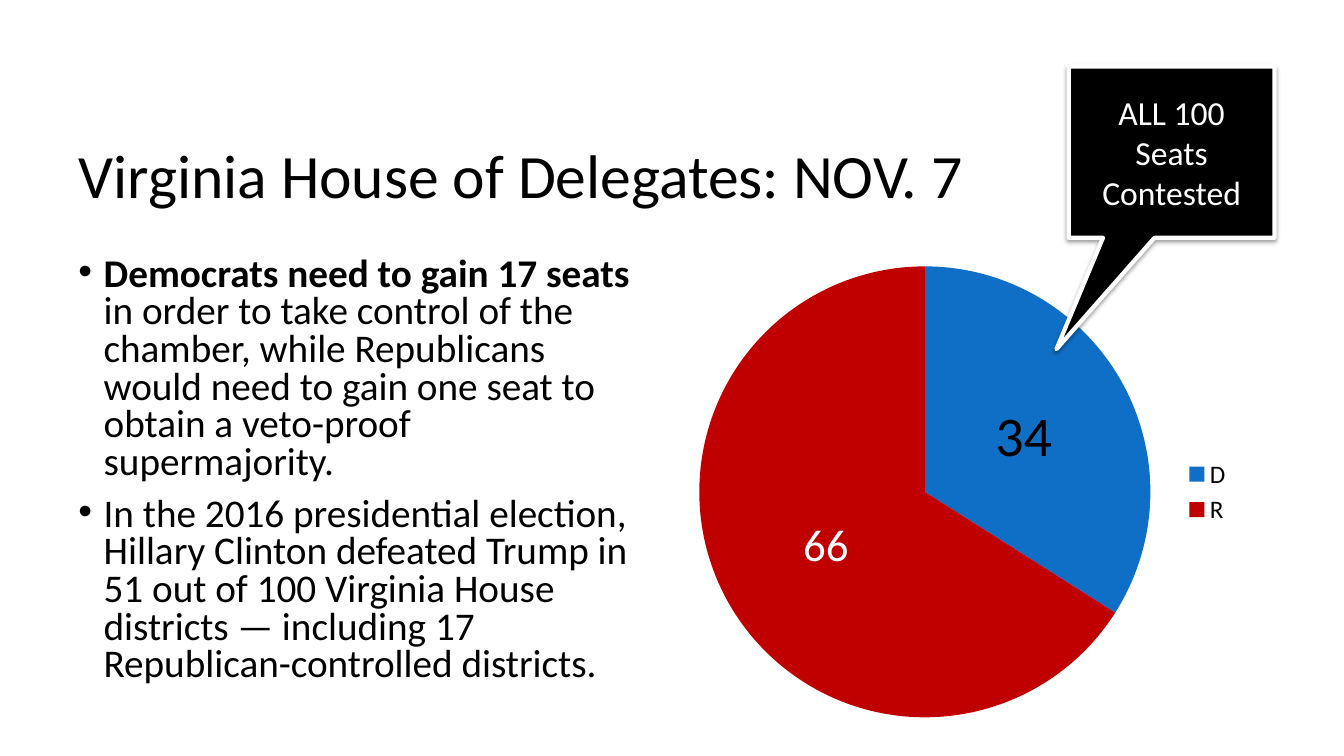
"""Builds the Virginia House of Delegates slide with its seat chart."""
import pptx
import pptx.chart.data
import pptx.dml.color
import pptx.enum.chart
import pptx.enum.shapes
import pptx.enum.text
import pptx.oxml
import pptx.oxml.ns
import pptx.util
from pptx.util import Inches, Pt

FONT = "Calibri"
BLACK, WHITE = "000000", "FFFFFF"
HEADLINE = "Virginia House of Delegates: NOV. 7"
CALLOUT = "ALL 100 Seats Contested"
POINTS = [
    [("Democrats need to gain 17 seats", True),
     (" in order to take control of the chamber, while Republicans would need "
      "to gain one seat to obtain a veto-proof supermajority.", False)],
    [("In the 2016 presidential election, Hillary Clinton defeated Trump in 51 "
      "out of 100 Virginia House districts — including 17 "
      "Republican-controlled districts.", False)],
]
SEATS = [("D", 34, "0F6FC6", BLACK, 40), ("R", 66, "C00000", WHITE, 32)]

HEADLINE_BOX = (0.68, 1.05, 10.41, 1.45)
POINTS_BOX = (0.68, 2.5, 5.7, 4.76)
CHART_BOX = (6.65, 2.5, 5.67, 4.76)
CALLOUT_BOX = (10.6, 0.66, 2.04, 1.7)
PIE_LAYOUT = {"x": 0.05, "y": 0.03, "w": 0.79, "h": 0.94}
NS = pptx.oxml.ns.nsdecls("a", "c")


def color(value):
    return pptx.dml.color.RGBColor.from_string(value)


def style(font, size, hue, bold=False):
    font.name, font.size, font.bold = FONT, Pt(size), bold
    font.color.rgb = color(hue)


def place(box):
    return [Inches(length) for length in box]


def add_text(slide, box, anchor):
    frame = slide.shapes.add_textbox(*place(box)).text_frame
    frame.word_wrap = True
    frame.vertical_anchor = anchor
    return frame


def add_headline(slide):
    frame = add_text(slide, HEADLINE_BOX, pptx.enum.text.MSO_ANCHOR.MIDDLE)
    frame.text = HEADLINE
    frame.paragraphs[0].line_spacing = 0.9
    style(frame.paragraphs[0].runs[0].font, 44, BLACK)


def add_points(slide):
    frame = add_text(slide, POINTS_BOX, pptx.enum.text.MSO_ANCHOR.TOP)
    for index, pieces in enumerate(POINTS):
        paragraph = frame.add_paragraph() if index else frame.paragraphs[0]
        paragraph.line_spacing = 0.8
        paragraph.space_before = Pt(10 if index else 0)
        properties = paragraph._p.get_or_add_pPr()
        properties.set("marL", str(Inches(0.25)))
        properties.set("indent", str(-Inches(0.25)))
        for xml in (f'<a:buFont {NS} typeface="Arial"/>', f'<a:buChar {NS} char="•"/>'):
            properties.append(pptx.oxml.parse_xml(xml))
        for words, bold in pieces:
            run = paragraph.add_run()
            run.text = words
            style(run.font, 28, BLACK, bold)


def add_seat_chart(slide):
    data = pptx.chart.data.CategoryChartData()
    data.categories = [seat[0] for seat in SEATS]
    data.add_series("Series 1", [seat[1] for seat in SEATS])
    chart = slide.shapes.add_chart(
        pptx.enum.chart.XL_CHART_TYPE.PIE, *place(CHART_BOX), data).chart
    style(chart.font, 18, BLACK)
    chart.has_title = False
    chart.has_legend = True
    chart.legend.position = pptx.enum.chart.XL_LEGEND_POSITION.RIGHT
    chart.legend.include_in_layout = False
    plot = chart.plots[0]
    plot.vary_by_categories = True
    plot.has_data_labels = True
    plot.data_labels.show_value = True
    plot.data_labels.show_percentage = False
    for index, (_, _, fill, label_hue, size) in enumerate(SEATS):
        point = plot.series[0].points[index]
        point.format.fill.solid()
        point.format.fill.fore_color.rgb = color(fill)
        style(point.data_label.font, size, label_hue)
        point.data_label.position = pptx.enum.chart.XL_LABEL_POSITION.CENTER
    area = chart._chartSpace.chart.plotArea
    for layout in area.findall(pptx.oxml.ns.qn("c:layout")):
        area.remove(layout)
    sizes = "".join(f'<c:{key} val="{part}"/>' for key, part in PIE_LAYOUT.items())
    area.insert(0, pptx.oxml.parse_xml(
        f'<c:layout {NS}><c:manualLayout><c:layoutTarget val="inner"/>'
        f'<c:xMode val="edge"/><c:yMode val="edge"/>{sizes}</c:manualLayout></c:layout>'))


def add_callout(slide):
    callout = slide.shapes.add_shape(
        pptx.enum.shapes.MSO_SHAPE.RECTANGULAR_CALLOUT, *place(CALLOUT_BOX))
    callout.adjustments[0], callout.adjustments[1] = -0.56, 1.15
    callout.fill.solid()
    callout.fill.fore_color.rgb = color(BLACK)
    callout.line.color.rgb = color(WHITE)
    callout.line.width = Pt(3)
    callout.shadow.inherit = False
    effects = callout._element.spPr.find(pptx.oxml.ns.qn("a:effectLst"))
    effects.append(pptx.oxml.parse_xml(
        f'<a:outerShdw {NS} blurRad="{Pt(3.1)}" dist="{Pt(1.6)}" dir="5400000" '
        f'rotWithShape="0"><a:srgbClr val="{BLACK}"><a:alpha val="38000"/>'
        '</a:srgbClr></a:outerShdw>'))
    frame = callout.text_frame
    frame.word_wrap = True
    frame.vertical_anchor = pptx.enum.text.MSO_ANCHOR.MIDDLE
    frame.text = CALLOUT
    frame.paragraphs[0].alignment = pptx.enum.text.PP_ALIGN.CENTER
    style(frame.paragraphs[0].runs[0].font, 24, WHITE)


def main():
    deck = pptx.Presentation()
    deck.slide_width, deck.slide_height = Inches(13.33), Inches(7.5)
    slide = deck.slides.add_slide(deck.slide_layouts[6])
    add_headline(slide)
    add_points(slide)
    add_seat_chart(slide)
    add_callout(slide)
    deck.save("out.pptx")


if __name__ == "__main__":
    main()
